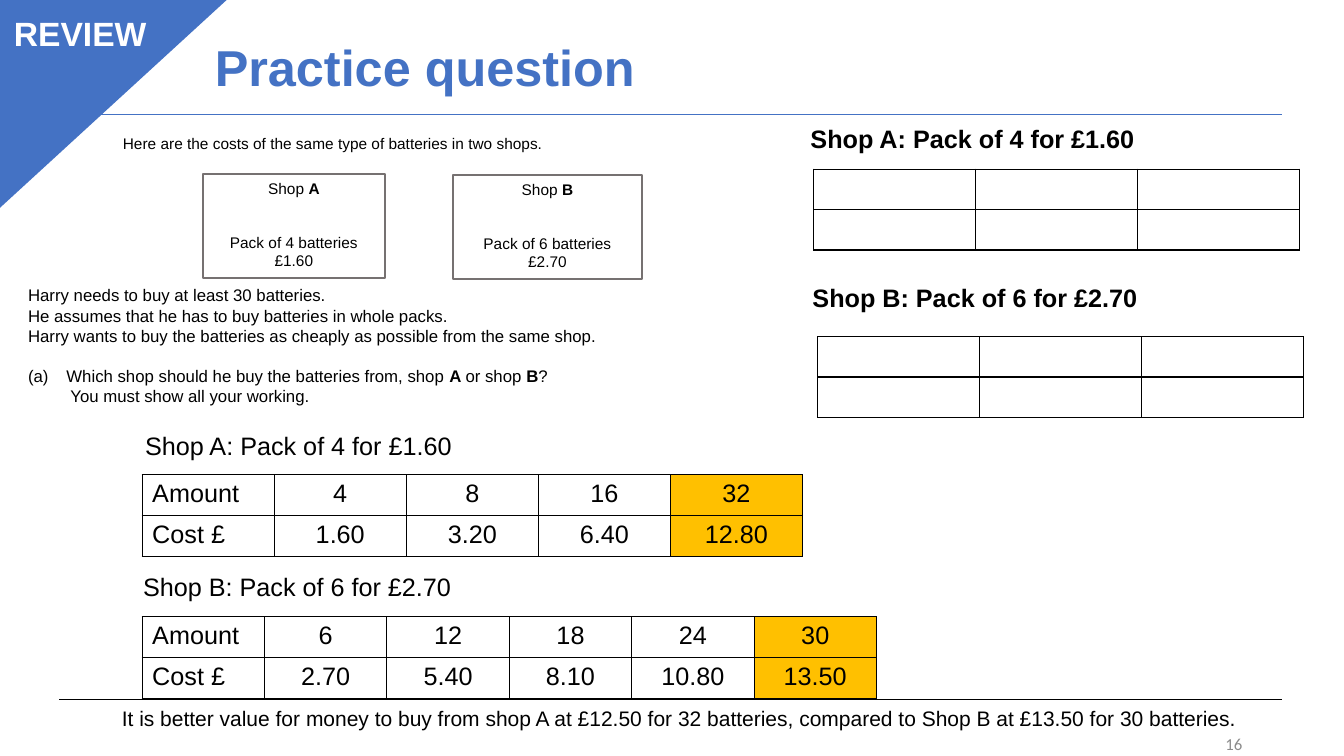
from lxml.etree import SubElement
from pptx import Presentation
from pptx.dml.color import RGBColor as RGB
from pptx.enum.shapes import MSO_CONNECTOR as CONN, MSO_SHAPE as SHAPE
from pptx.enum.text import MSO_ANCHOR as ANCHOR, PP_ALIGN as ALIGN
from pptx.oxml.ns import qn
from pptx.util import Inches, Pt

COLORS = {"blue": "4472C4", "black": "000000", "white": "FFFFFF",
          "box": "767171", "number": "8C8C8C", "answer": "FFC000"}
CELL = 0.1  # inches per grid column and row


def grid(*units):
    return [Inches(u * CELL) for u in units]


def color(name):
    return RGB.from_string(COLORS[name])


def write(tf, *lines, size=18, font="Arial", fill="black", bold=False,
          align=ALIGN.LEFT, anchor=ANCHOR.TOP, spacing=None):
    """Write one paragraph per line; *asterisks* toggle bold."""
    tf.word_wrap = True
    tf.vertical_anchor = anchor
    for i, line in enumerate(lines):
        p = tf.paragraphs[0] if i == 0 else tf.add_paragraph()
        p.alignment, p.line_spacing = align, spacing
        for j, part in enumerate(line.split("*")):
            if part:
                r = p.add_run()
                r.text = part
                r.font.size, r.font.name = Pt(size), font
                r.font.bold = bold or j % 2 == 1
                r.font.color.rgb = color(fill)
    return tf.paragraphs


def add_text(s, at, *lines, **fmt):
    return write(s.shapes.add_textbox(*grid(*at)).text_frame, *lines, **fmt)


def add_rule(s, y, line):
    cxn = s.shapes.add_connector(CONN.STRAIGHT, *grid(5.9, y, 127.2, y))
    cxn.line.color.rgb, cxn.line.width = color(line), Pt(0.75)
    SubElement(cxn._element.spPr, qn("a:effectLst"))


def add_corner(s):
    sp = s.shapes.add_shape(SHAPE.ISOSCELES_TRIANGLE, *grid(-0.3, -0.2, 22.9, 21))
    sp.adjustments[0] = 0
    sp._element.spPr.find(qn("a:xfrm")).set("flipV", "1")
    sp.shadow.inherit = False
    sp.fill.solid()
    sp.fill.fore_color.rgb = sp.line.color.rgb = color("blue")
    sp.line.width = Pt(1)


def add_shop(s, at, name, pack, price):
    sp = s.shapes.add_shape(SHAPE.RECTANGLE, *grid(*at))
    sp.shadow.inherit = False
    sp.fill.background()
    sp.line.color.rgb, sp.line.width = color("box"), Pt(1.5)
    ps = write(sp.text_frame, f"Shop *{name}*", f"Pack of {pack} batteries", price,
               size=11, align=ALIGN.CENTER)
    ps[1].space_before = Pt(25)


def set_borders(cell, width):
    tc_pr = cell._tc.get_or_add_tcPr()
    for side in "LRTB":
        ln = SubElement(tc_pr, qn(f"a:ln{side}"), w=str(Pt(width)))
        SubElement(SubElement(ln, qn("a:solidFill")), qn("a:srgbClr"),
                   val=COLORS["black"])


def add_grid_table(s, x, y, col_w, row_h, rows, border=0.75):
    n = len(rows[0])
    tbl = s.shapes.add_table(len(rows), n,
                             *grid(x, y, col_w * n, row_h * len(rows))).table
    tbl.first_row = tbl.horz_banding = False
    for i, row in enumerate(rows):
        for j, value in enumerate(row):
            cell = tbl.cell(i, j)
            set_borders(cell, border)
            if value and j == n - 1:
                cell.fill.solid()
                cell.fill.fore_color.rgb = color("answer")
            else:
                cell.fill.background()
            write(cell.text_frame, value, align=ALIGN.CENTER if j else ALIGN.LEFT)


def add_question(s):
    ps = add_text(s, (1.8, 27.8, 77.8, 13.5),
                  "Harry needs to buy at least 30 batteries.",
                  "He assumes that he has to buy batteries in whole packs.",
                  "Harry wants to buy the batteries as cheaply as possible from the same shop.",
                  "Which shop should he buy the batteries from, shop *A *or shop *B*?",
                  "You must show all your working.", size=12)
    # Part (a): numbered with a hanging indent
    ps[3].space_before = Pt(14)
    p_pr = ps[3]._p.get_or_add_pPr()
    p_pr.set("marL", str(Inches(0.38)))
    p_pr.set("indent", str(-Inches(0.38)))
    SubElement(p_pr, qn("a:buFont"), typeface="Arial")
    SubElement(p_pr, qn("a:buAutoNum"), type="alphaLcParenBoth")
    ps[4]._p.get_or_add_pPr().set("marL", str(Inches(0.42)))


def main():
    prs = Presentation()
    prs.slide_width, prs.slide_height = Inches(13.33), Inches(7.5)
    s = prs.slides.add_slide(prs.slide_layouts[5])

    # Frame and title
    add_rule(s, 69.4, "black")
    add_rule(s, 11.4, "blue")
    add_text(s, (94.2, 71.8, 30, 4), "16", size=12, font="Calibri", fill="number",
             align=ALIGN.RIGHT, anchor=ANCHOR.MIDDLE)
    title = s.shapes.title
    title.left, title.top, title.width, title.height = grid(20.3, 1.4, 86.9, 11.1)
    write(title.text_frame, "Practice question", size=36, fill="blue", bold=True,
          anchor=ANCHOR.MIDDLE, spacing=0.9)
    add_corner(s)
    add_text(s, (-0.3, 0.8, 16.5, 5), "REVIEW", size=24, fill="white", bold=True,
             align=ALIGN.CENTER)

    # Question
    add_text(s, (11.2, 12.8, 57.9, 5.9),
             "Here are the costs of the same type of batteries in two shops.", size=11)
    add_shop(s, (20.1, 17.3, 18.1, 10.3), "A", 4, "£1.60")
    add_shop(s, (44.9, 17.4, 18.8, 10.3), "B", 6, "£2.70")
    add_question(s)

    # Empty working tables and worked answers
    shop_a, shop_b = "Shop A: Pack of 4 for £1.60", "Shop B: Pack of 6 for £2.70"
    empty = [[""] * 3] * 2
    add_text(s, (79.4, 11.7, 35.8, 4), shop_a, bold=True)
    add_grid_table(s, 80.7, 16.8, 16.07, 4, empty, border=1)
    add_text(s, (79.6, 27.5, 35.8, 4), shop_b, bold=True)
    add_grid_table(s, 81.1, 33.4, 16.07, 4, empty, border=1)
    add_text(s, (13.4, 42.2, 35.8, 4), shop_a)
    add_grid_table(s, 14.1, 47.1, 13.1, 4.05,
                   [["Amount", "4", "8", "16", "32"],
                    ["Cost £", "1.60", "3.20", "6.40", "12.80"]])
    add_text(s, (13.2, 56.2, 35.8, 4), shop_b)
    add_grid_table(s, 14.1, 61.2, 12.14, 4.05,
                   [["Amount", "6", "12", "18", "24", "30"],
                    ["Cost £", "2.70", "5.40", "8.10", "10.80", "13.50"]])

    # Conclusion
    add_text(s, (11.1, 69.5, 118.8, 3.5),
             "It is better value for money to buy from shop A at £12.50 for 32 batteries, "
             "compared to Shop B at £13.50 for 30 batteries.", size=15)
    prs.save("out.pptx")


if __name__ == "__main__":
    main()
